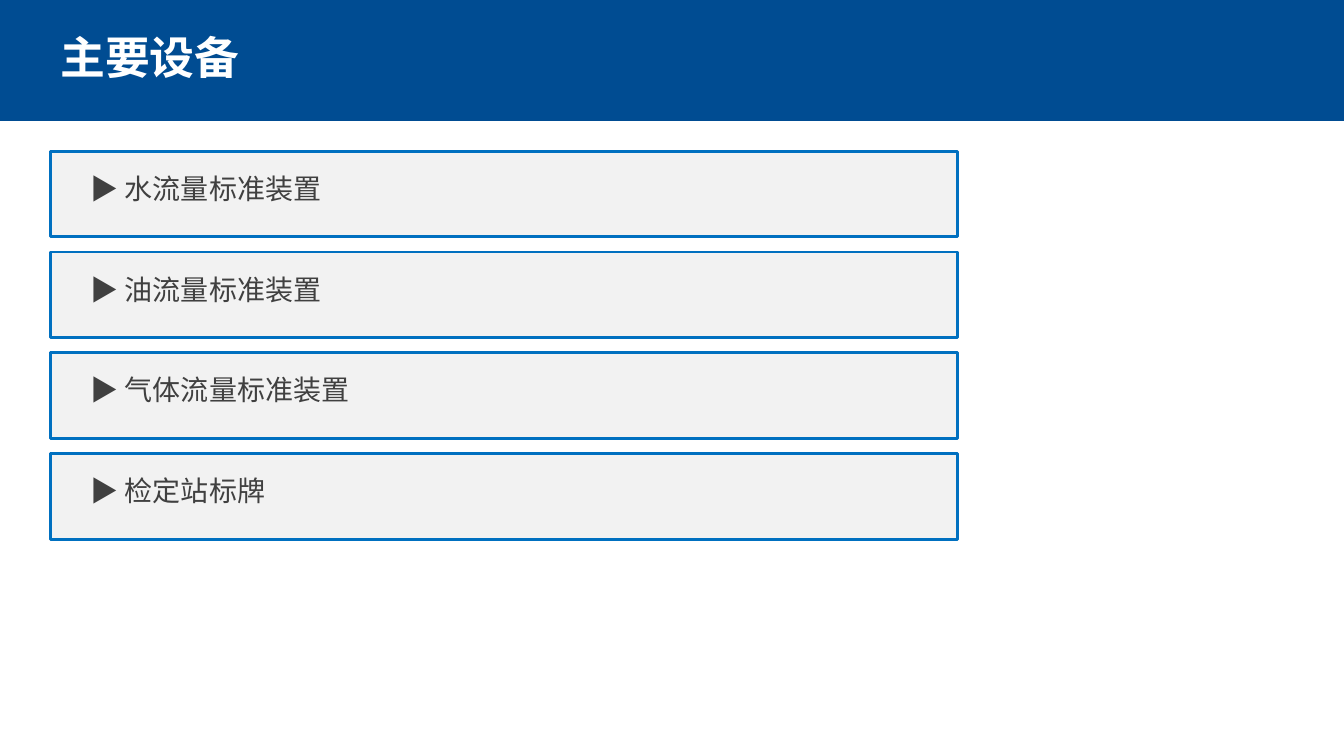
from dataclasses import dataclass

from lxml.etree import SubElement
from pptx import Presentation
from pptx.dml.color import RGBColor
from pptx.enum.shapes import MSO_SHAPE
from pptx.enum.text import MSO_AUTO_SIZE
from pptx.oxml.ns import qn
from pptx.slide import Slide
from pptx.util import Inches, Pt

NAVY = RGBColor(0x00, 0x4C, 0x92)
BLUE = RGBColor(0x00, 0x70, 0xC0)
LIGHT_GRAY = RGBColor(0xF2, 0xF2, 0xF2)
DARK_GRAY = RGBColor(0x40, 0x40, 0x40)
WHITE = RGBColor(0xFF, 0xFF, 0xFF)
FONT = "Noto Sans CJK SC"

DEVICES = ["水流量标准装置", "油流量标准装置", "气体流量标准装置", "检定站标牌"]
FIRST_CARD_TOP = 1.5
CARD_PITCH = 1.0
LABEL_OFFSET = 0.15


@dataclass(frozen=True)
class Box:
    """A rectangle in inches."""
    left: float
    top: float
    width: float
    height: float

    def lengths(self) -> list[Inches]:
        return [Inches(value) for value in (self.left, self.top, self.width, self.height)]


@dataclass(frozen=True)
class TextStyle:
    size: int
    color: RGBColor
    bold: bool = False


TITLE_STYLE = TextStyle(32, WHITE, bold=True)
LABEL_STYLE = TextStyle(20, DARK_GRAY)


def add_panel(slide: Slide, box: Box, fill: RGBColor, border: RGBColor | None = None) -> None:
    shape = slide.shapes.add_shape(MSO_SHAPE.RECTANGLE, *box.lengths())
    shape.shadow.inherit = False
    shape.fill.solid()
    shape.fill.fore_color.rgb = fill
    if border is None:
        shape.line.fill.background()
    else:
        shape.line.color.rgb = border
        shape.line.width = Pt(2)


def add_text(slide: Slide, box: Box, text: str, style: TextStyle) -> None:
    text_frame = slide.shapes.add_textbox(*box.lengths()).text_frame
    text_frame.word_wrap = True
    text_frame.auto_size = MSO_AUTO_SIZE.SHAPE_TO_FIT_TEXT
    paragraph = text_frame.paragraphs[0]
    paragraph.text = text
    font = paragraph.font
    font.name = FONT
    font.size = Pt(style.size)
    font.bold = style.bold
    font.color.rgb = style.color
    # Chinese characters take the East Asian typeface
    properties = paragraph._p.find(f"{qn('a:pPr')}/{qn('a:defRPr')}")
    SubElement(properties, qn("a:ea"), typeface=FONT)


def main() -> None:
    presentation = Presentation()
    presentation.slide_width = Inches(13.33)
    presentation.slide_height = Inches(7.5)
    slide = presentation.slides.add_slide(presentation.slide_layouts[6])

    add_panel(slide, Box(0, 0, 13.33, 1.2), NAVY)
    add_text(slide, Box(0.5, 0.25, 9, 0.64), "主要设备", TITLE_STYLE)

    for index, device in enumerate(DEVICES):
        top = FIRST_CARD_TOP + index * CARD_PITCH
        add_panel(slide, Box(0.5, top, 9, 0.85), LIGHT_GRAY, BLUE)
        add_text(slide, Box(0.8, top + LABEL_OFFSET, 8.5, 0.44), f"▶ {device}", LABEL_STYLE)

    presentation.save("out.pptx")


if __name__ == "__main__":
    main()
